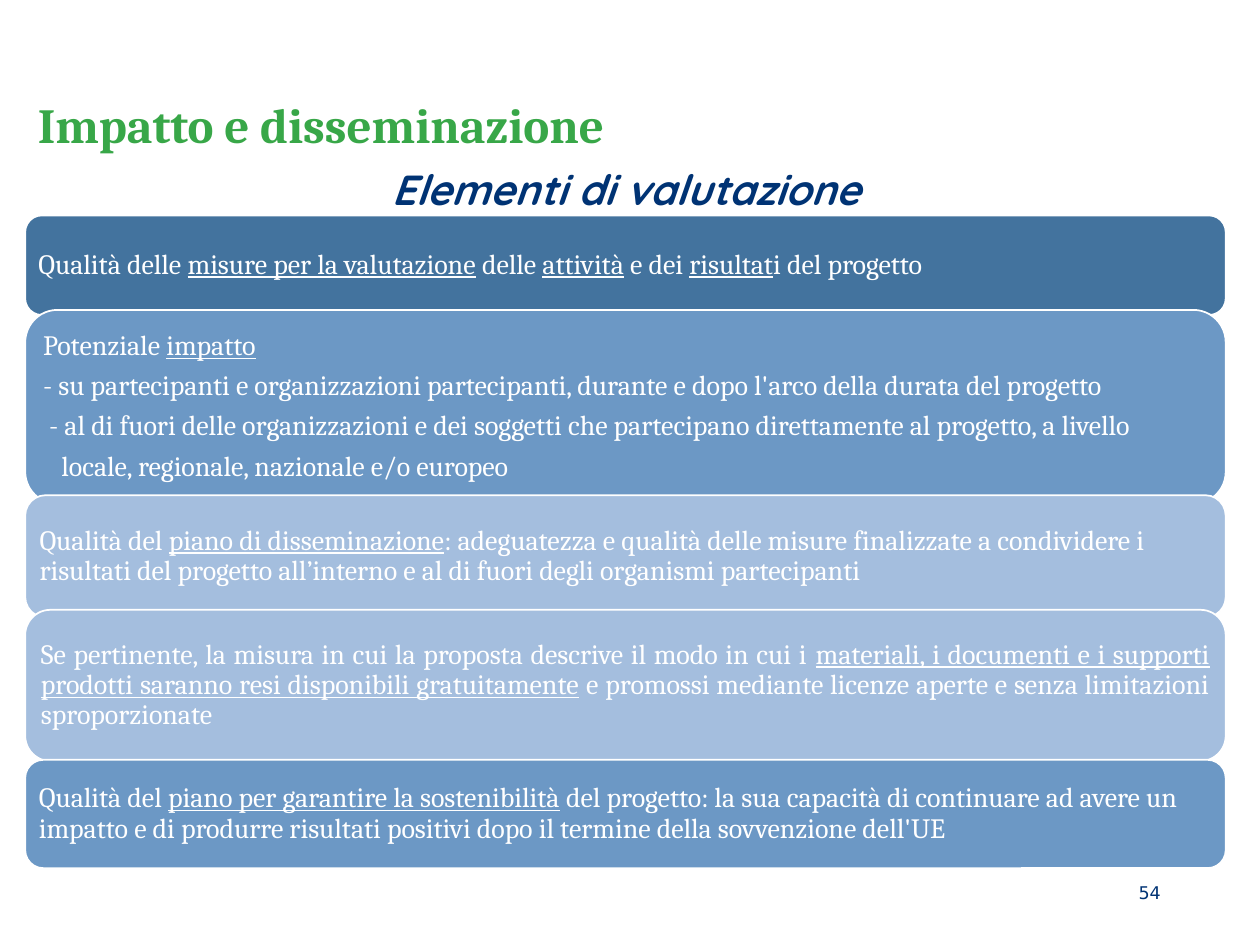
import pptx
import pptx.util
import pptx.dml.color
import pptx.enum.shapes
import pptx.enum.text

Pt = pptx.util.Pt
RGBColor = pptx.dml.color.RGBColor
ALIGN = pptx.enum.text.PP_ALIGN
ANCHOR = pptx.enum.text.MSO_ANCHOR

GREEN = RGBColor(0x38, 0xA7, 0x48)
NAVY = RGBColor(0x00, 0x33, 0x74)
WHITE = RGBColor(0xFF, 0xFF, 0xFF)
DARK_BLUE = RGBColor(0x43, 0x73, 0x9E)
MID_BLUE = RGBColor(0x6C, 0x98, 0xC5)
LIGHT_BLUE = RGBColor(0xA4, 0xBE, 0xDE)


def set_font(font, name, size, color, bold=False, italic=False):
    font.name = name
    font.size = Pt(size)
    font.color.rgb = color
    font.bold = bold
    font.italic = italic


presentation = pptx.Presentation()
presentation.slide_width = Pt(720)
presentation.slide_height = Pt(540)
slide = presentation.slides.add_slide(presentation.slide_layouts[5])

# Title
title = slide.shapes.title
title.left, title.top, title.width, title.height = Pt(14.4), Pt(54), Pt(686), Pt(38)
title.text_frame.text = "Impatto e disseminazione"
title.text_frame.auto_size = pptx.enum.text.MSO_AUTO_SIZE.NONE
title.text_frame.vertical_anchor = ANCHOR.MIDDLE
heading = title.text_frame.paragraphs[0]
heading.alignment = ALIGN.LEFT
heading.line_spacing = 0.9
set_font(heading.runs[0].font, "Cambria", 28, GREEN, bold=True)

# Evaluation criteria: top, height, fill, paragraphs (text, alignment, indent);
# underscores enclose the underlined words
criteria = [
    (123.1, 56.9, DARK_BLUE, [
        ("Qualità delle _misure per la valutazione_ delle _attività_ e dei "
         "_risultat_i del progetto", ALIGN.LEFT, 0)]),
    (177.1, 110.9, MID_BLUE, [
        ("Potenziale _impatto_", ALIGN.LEFT, 0),
        ("- su partecipanti e organizzazioni partecipanti, durante e dopo "
         "l'arco della durata del progetto", ALIGN.JUSTIFY, 0),
        ("- al di fuori delle organizzazioni e dei soggetti che partecipano "
         "direttamente al progetto, a livello", ALIGN.LEFT, 3.5),
        ("locale, regionale, nazionale e/o europeo", ALIGN.LEFT, 10.5)]),
    (283, 69.8, LIGHT_BLUE, [
        ("Qualità del _piano di disseminazione_: adeguatezza e qualità delle "
         "misure finalizzate a condividere i risultati del progetto "
         "all’interno e al di fuori degli organismi partecipanti",
         ALIGN.LEFT, 0)]),
    (348.5, 86.4, LIGHT_BLUE, [
        ("Se pertinente, la misura in cui la proposta descrive il modo in cui "
         "i _materiali, i documenti e i supporti prodotti saranno resi "
         "disponibili gratuitamente_ e promossi mediante licenze aperte e "
         "senza limitazioni sproporzionate", ALIGN.JUSTIFY, 0)]),
    (434.2, 61.9, MID_BLUE, [
        ("Qualità del _piano per garantire la sostenibilità_ del progetto: la "
         "sua capacità di continuare ad avere un impatto e di produrre "
         "risultati positivi dopo il termine della sovvenzione dell'UE",
         ALIGN.LEFT, 0)]),
]
for top, height, fill, paragraphs in criteria:
    criterion = slide.shapes.add_shape(
        pptx.enum.shapes.MSO_SHAPE.ROUNDED_RECTANGLE,
        Pt(14.4), Pt(top), Pt(686), Pt(height))
    criterion.shadow.inherit = False
    criterion.fill.solid()
    criterion.fill.fore_color.rgb = fill
    criterion.line.color.rgb = WHITE
    criterion.line.width = Pt(1)
    frame = criterion.text_frame
    frame.word_wrap = True
    frame.vertical_anchor = ANCHOR.MIDDLE
    frame.margin_left = frame.margin_right = Pt(4.8)
    frame.margin_top = frame.margin_bottom = Pt(4.8)
    for index, (text, alignment, indent) in enumerate(paragraphs):
        paragraph = frame.add_paragraph() if index else frame.paragraphs[0]
        paragraph.alignment = alignment
        paragraph.line_spacing = 0.9
        paragraph.space_after = Pt(5.6)
        if indent:
            paragraph._p.get_or_add_pPr().set("marL", str(Pt(indent)))
        for part, words in enumerate(text.split("_")):
            if words:
                run = paragraph.add_run()
                run.text = words
                set_font(run.font, "Cambria", 16, WHITE)
                run.font.underline = part % 2 == 1

# Subtitle and slide number
labels = [
    ("Elementi di valutazione", (214.6, 90, 286, 36), ALIGN.CENTER, False,
     ("Quicksand", 24, NAVY, True, True)),
    ("54", (508.3, 500.4, 162, 28.8), ALIGN.RIGHT, True,
     ("DejaVu Sans", 10, NAVY)),
]
for text, place, alignment, wrap, font in labels:
    label = slide.shapes.add_textbox(*[Pt(length) for length in place])
    label.text_frame.word_wrap = wrap
    label.text_frame.text = text
    line = label.text_frame.paragraphs[0]
    line.alignment = alignment
    set_font(line.runs[0].font, *font)

presentation.save("out.pptx")
